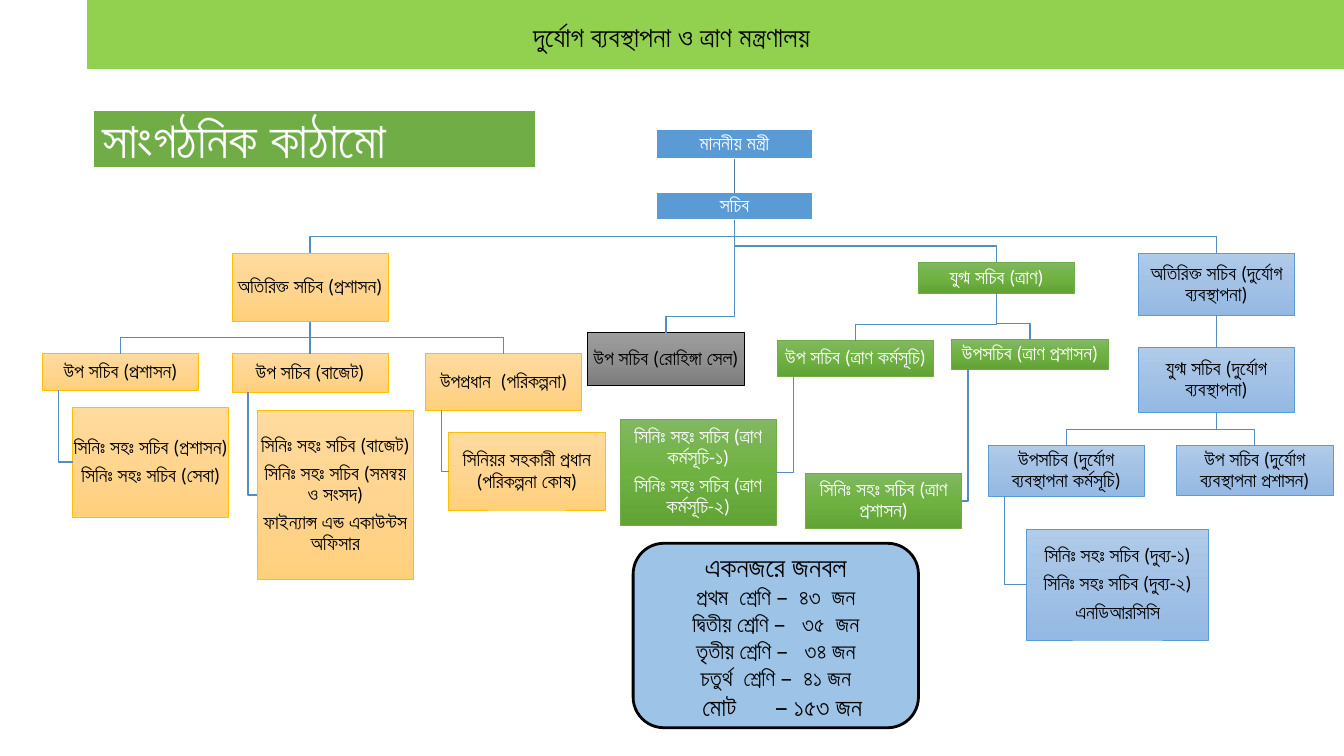
from copy import deepcopy
from pptx import Presentation
from pptx.dml.color import RGBColor
from pptx.enum import shapes, text
from pptx.oxml import parse_xml
from pptx.oxml.ns import nsdecls, qn
from pptx.util import Inches, Pt

COLORS = {"black": "000000", "white": "FFFFFF", "header": "92D050", "title": "70AD47",
          "summary": "9DC3E6", "branch": "538DC1", "top_link": "497CAB"}
# fill stops from top to bottom, border colour, border width, text colour
STYLES = {
    "top": (["5B9BD5"], "FFFFFF", 1, "white"),
    "admin": (["FFDB9E", "FFD590", "FFD07C"], "FFC000", 0.5, "black"),
    "relief": (["81B861", "6FB242", "62A336"], "70AD47", 0.5, "white"),
    "cell": (["9D9D9D", "909090", "7C7C7C"], "000000", 0.5, "black"),
    "disaster": (["B1CBE9", "A3C1E5", "93B9E4"], "5B9BD5", 0.5, "black"),
}
HEADER = "দুর্যোগ ব্যবস্থাপনা ও ত্রাণ মন্ত্রণালয়"
TITLE = "সাংগঠনিক কাঠামো"
# post: (parent, link, style, (left, top, width, height), lines)
W = 1.55
POSTS = {
    "minister": (None, None, "top", (6.51, 1.28, W, 0.3), ["মাননীয় মন্ত্রী"]),
    "secretary": ("minister", "below", "top", (6.51, 1.91, W, 0.27), ["সচিব"]),
    "admin": ("secretary", "below", "admin", (2.3, 2.51, W, 0.68),
              ["অতিরিক্ত সচিব (প্রশাসন)"]),
    "admin_deputy": ("admin", "below", "admin", (0.42, 3.51, W, 0.36),
                     ["উপ সচিব (প্রশাসন)"]),
    "admin_staff": ("admin_deputy", "beside", "admin", (0.72, 4.04, W, 1.09),
                    ["সিনিঃ সহঃ সচিব (প্রশাসন)", "সিনিঃ সহঃ সচিব (সেবা)"]),
    "budget": ("admin", "below", "admin", (2.3, 3.51, W, 0.38), ["উপ সচিব (বাজেট)"]),
    "budget_staff": ("budget", "beside", "admin", (2.55, 4.07, W, 1.68),
                     ["সিনিঃ সহঃ সচিব (বাজেট)", "সিনিঃ সহঃ সচিব (সমন্বয় ও সংসদ)",
                      "ফাইন্যান্স এন্ড একাউন্টস অফিসার"]),
    "planning": ("admin", "below", "admin", (4.22, 3.51, W, 0.56),
                 ["উপপ্রধান  (পরিকল্পনা)"]),
    "planning_staff": ("planning", "beside", "admin", (4.45, 4.29, W, 0.77),
                       ["সিনিয়র সহকারী প্রধান (পরিকল্পনা কোষ)"]),
    "relief": ("secretary", "below", "relief", (9.11, 2.6, W, 0.31),
               ["যুগ্ম সচিব (ত্রাণ)"]),
    "programme": ("relief", "below", "relief", (7.71, 3.38, W, 0.35),
                  ["উপ সচিব (ত্রাণ কর্মসূচি)"]),
    "programme_staff": ("programme", "beside", "relief", (6.15, 4.16, W, 1.05),
                        ["সিনিঃ সহঃ সচিব (ত্রাণ কর্মসূচি-১)",
                         "সিনিঃ সহঃ সচিব (ত্রাণ কর্মসূচি-২)"]),
    "relief_admin": ("relief", "below", "relief", (9.44, 3.37, W, 0.29),
                     ["উপসচিব (ত্রাণ প্রশাসন)"]),
    "relief_admin_staff": ("relief_admin", "beside", "relief", (7.99, 4.7, W, 0.54),
                           ["সিনিঃ সহঃ সচিব (ত্রাণ প্রশাসন)"]),
    "cell": ("secretary", "below", "cell", (5.83, 3.3, W, 0.52),
             ["উপ সচিব (রোহিঙ্গা সেল)"]),
    "disaster": ("secretary", "below", "disaster", (11.29, 2.51, W, 0.62),
                 ["অতিরিক্ত সচিব (দুর্যোগ ব্যবস্থাপনা)"]),
    "disaster_joint": ("disaster", "below", "disaster", (11.29, 3.45, W, 0.64),
                       ["যুগ্ম সচিব (দুর্যোগ ব্যবস্থাপনা)"]),
    "disaster_programme": ("disaster_joint", "below", "disaster", (9.8, 4.42, W, 0.5),
                           ["উপসচিব (দুর্যোগ ব্যবস্থাপনা কর্মসূচি)"]),
    "disaster_staff": ("disaster_programme", "beside", "disaster", (10.18, 5.25, 1.81, 1.1),
                       ["সিনিঃ সহঃ সচিব (দুব্য-১)", "সিনিঃ সহঃ সচিব (দুব্য-২)",
                        "এনডিআরসিসি"]),
    "disaster_admin": ("disaster_joint", "below", "disaster", (11.67, 4.42, W, 0.49),
                       ["উপ সচিব (দুর্যোগ ব্যবস্থাপনা প্রশাসন)"]),
}
SUMMARY = ["একনজরে জনবল", "প্রথম  শ্রেণি –  ৪৩  জন", "দ্বিতীয় শ্রেণি –   ৩৫  জন",
           "তৃতীয় শ্রেণি –   ৩৪ জন", "চতুর্থ  শ্রেণি –  ৪১ জন", "\tমোট\t– ১৫৩ জন"]
SUMMARY_SIZES = [20, 16, 16, 16, 16, 18]
TOTAL_TABS = (0.5, 1.22)
BEND = 0.16  # distance from a bend to the box it serves

LEFT, CENTER = text.PP_ALIGN.LEFT, text.PP_ALIGN.CENTER
MIDDLE, TOP = text.MSO_ANCHOR.MIDDLE, text.MSO_ANCHOR.TOP


def rgb(value):
    return RGBColor.from_string(COLORS.get(value, value))


def write(shape, lines, sizes, color="black", align=CENTER, anchor=MIDDLE,
          inset=None, spacing=None, after=0):
    frame = shape.text_frame
    frame.word_wrap = True
    frame.auto_size = text.MSO_AUTO_SIZE.NONE
    frame.vertical_anchor = anchor
    if inset is not None:
        frame.margin_left = frame.margin_right = Inches(inset)
        frame.margin_top = frame.margin_bottom = Inches(inset)
    for i, (line, size) in enumerate(zip(lines, sizes)):
        paragraph = frame.paragraphs[0] if i == 0 else frame.add_paragraph()
        paragraph.alignment = align
        paragraph.space_before, paragraph.space_after = Pt(0), Pt(after)
        if spacing:
            paragraph.line_spacing = spacing
        run = paragraph.add_run()
        run.text = line
        run.font.name, run.font.size = "Calibri", Pt(size)
        run.font.color.rgb = rgb(color)
    return frame


def paint(shape, stops, border, width):
    """Fill a shape with one colour or a vertical gradient, and outline it."""
    shape.shadow.inherit = False
    if len(stops) == 1:
        shape.fill.solid()
        shape.fill.fore_color.rgb = rgb(stops[0])
    else:
        shape.fill.gradient()
        shape.fill.gradient_angle = 270
        stop_list = shape._element.spPr.find(".//" + qn("a:gsLst"))
        while len(stop_list) < len(stops):
            stop_list.append(deepcopy(stop_list[0]))
        for i, (stop, color) in enumerate(zip(shape.fill.gradient_stops, stops)):
            stop.position = i / (len(stops) - 1)
            stop.color.rgb = rgb(color)
    shape.line.color.rgb = rgb(border)
    shape.line.width = Pt(width)


def add_box(slide, place, stops, border, width, kind=shapes.MSO_SHAPE.RECTANGLE):
    box = slide.shapes.add_shape(kind, *map(Inches, place))
    paint(box, stops, border, width)
    return box


def add_straight(slide, parent, child, color):
    line = slide.shapes.add_connector(shapes.MSO_CONNECTOR.STRAIGHT, 0, 0, 0, 0)
    line.begin_connect(parent, 2)
    line.end_connect(child, 0)
    line.line.color.rgb, line.line.width = rgb(color), Pt(1)
    line._element.spPr.append(parse_xml(f"<a:effectLst {nsdecls('a')}/>"))


def add_bent(slide, points):
    start, *rest = [(Inches(x), Inches(y)) for x, y in points]
    builder = slide.shapes.build_freeform(*start)
    builder.add_line_segments(rest, close=False)
    line = builder.convert_to_shape()
    line.fill.background()
    line.shadow.inherit = False
    line.line.color.rgb, line.line.width = rgb("branch"), Pt(1)


def bent_points(parent, child, link):
    px, py, pw, ph = parent
    cx, cy, cw, ch = child
    if link == "below":
        start, end = px + pw / 2, cx + cw / 2
        return [(start, py + ph), (start, cy - BEND), (end, cy - BEND), (end, cy)]
    stem, middle = px + BEND, cy + ch / 2
    side = cx if cx > px else cx + cw
    return [(stem, py + ph), (stem, middle), (side, middle)]


def main():
    deck = Presentation()
    deck.slide_width, deck.slide_height = Inches(13.33), Inches(7.5)
    slide = deck.slides.add_slide(deck.slide_layouts[5])

    add_box(slide, (0.87, 0, 12.46, 0.68), ["header"], "header", 1)
    header = slide.shapes.add_textbox(*map(Inches, (3.23, 0.14, 6.86, 0.44)))
    write(header, [HEADER], [20], anchor=TOP)

    title = slide.shapes.title
    title.left, title.top, title.width, title.height = map(Inches, (0.92, 1.09, 4.4, 0.58))
    paint(title, ["title"], "white", 1.5)
    write(title, [TITLE], [36], color="white", align=LEFT, anchor=TOP, spacing=0.9)

    boxes = {}
    for post, (parent, link, style, place, lines) in POSTS.items():
        stops, border, width, color = STYLES[style]
        boxes[post] = add_box(slide, place, stops, border, width)
        write(boxes[post], lines, [14] * len(lines), color=color, inset=0.01,
              spacing=0.9, after=4.9)
        if parent is None:
            continue
        above = POSTS[parent][3]
        if link == "below" and above[0] == place[0]:
            add_straight(slide, boxes[parent], boxes[post],
                         "top_link" if parent == "minister" else "branch")
        else:
            add_bent(slide, bent_points(above, place, link))

    summary = add_box(slide, (6.28, 5.39, 2.83, 1.83), ["summary"], "black", 2,
                      shapes.MSO_SHAPE.ROUNDED_RECTANGLE)
    total = write(summary, SUMMARY, SUMMARY_SIZES).paragraphs[-1]
    total.alignment = LEFT
    tabs = "".join(f'<a:tab pos="{Inches(t)}" algn="l"/>' for t in TOTAL_TABS)
    total._p.get_or_add_pPr().append(parse_xml(f"<a:tabLst {nsdecls('a')}>{tabs}</a:tabLst>"))

    deck.save("out.pptx")


if __name__ == "__main__":
    main()
